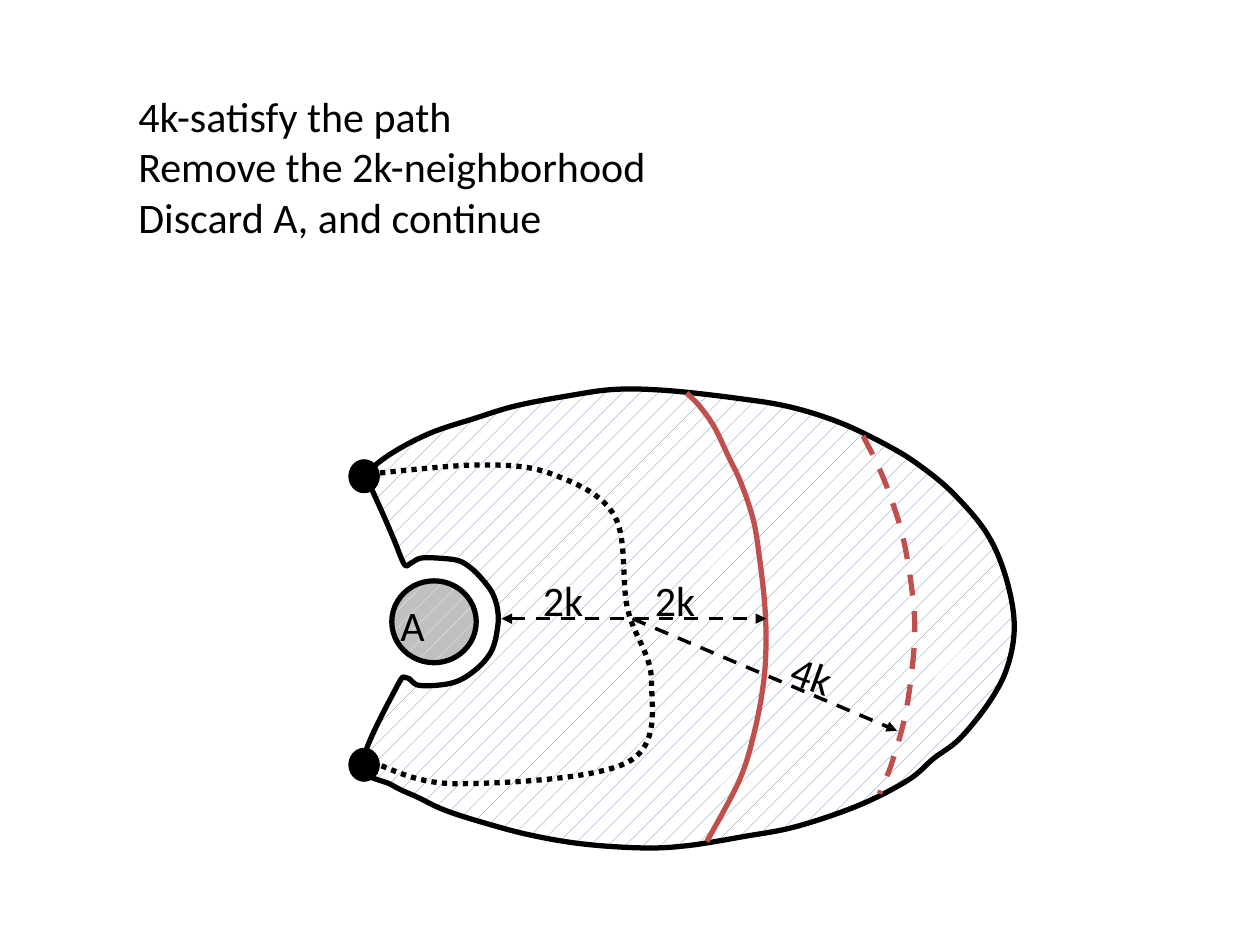
from lxml import etree
from pptx import Presentation
from pptx.dml.color import RGBColor
from pptx.enum.dml import MSO_LINE, MSO_PATTERN
from pptx.enum.shapes import MSO_CONNECTOR, MSO_SHAPE
from pptx.enum.text import MSO_AUTO_SIZE
from pptx.oxml.ns import qn
from pptx.util import Pt

PX = 9144  # 100 px to the inch
BLACK = RGBColor(0x00, 0x00, 0x00)
WHITE = RGBColor(0xFF, 0xFF, 0xFF)
BLUE = RGBColor(0x4F, 0x81, 0xBD)
RED = RGBColor(0xC0, 0x50, 0x4D)
GREY = RGBColor(0xC0, 0xC0, 0xC0)
DASH = MSO_LINE.DASH
DOT = MSO_LINE.ROUND_DOT
PATTERN = MSO_PATTERN.PERCENT_5
OVAL = MSO_SHAPE.OVAL
STRAIGHT = MSO_CONNECTOR.STRAIGHT
GROW = MSO_AUTO_SIZE.SHAPE_TO_FIT_TEXT

prs = Presentation()
prs.slide_width, prs.slide_height = 1000 * PX, 750 * PX
shapes = prs.slides.add_slide(prs.slide_layouts[6]).shapes


def add_text(text, left, top, width=73, height=46, size=24, color=BLACK, rotation=0):
    box = shapes.add_textbox(left * PX, top * PX, width * PX, height * PX)
    box.rotation = rotation
    frame = box.text_frame
    frame.word_wrap = True
    frame.auto_size = GROW
    frame.text = text
    for paragraph in frame.paragraphs:
        paragraph.font.name = "Calibri"
        paragraph.font.size = Pt(size)
        paragraph.font.color.rgb = color


def add_curve(points, color, dash=None, closed=False):
    """Draw a smooth (Catmull-Rom) curve through the points, given in px."""
    knots = points + points[:1] if closed else points
    emu = [(x * PX, y * PX) for x, y in knots]
    builder = shapes.build_freeform(*emu[0], scale=1.0)
    builder.add_line_segments(emu[1:], close=closed)
    curve = builder.convert_to_shape()
    curve.shadow.inherit = False
    curve.fill.background()
    curve.line.color.rgb = color
    curve.line.width = Pt(3)
    if dash:
        curve.line.dash_style = dash

    local = [(x - curve.left, y - curve.top) for x, y in emu]
    before = local[-2] if closed else local[0]
    after = local[1] if closed else local[-1]
    padded = [before] + local + [after]
    segments = list(curve._element.iter(qn("a:lnTo")))
    for segment, p0, p1, p2, p3 in zip(segments, padded, padded[1:], padded[2:], padded[3:]):
        leave = [b + (c - a) / 6 for a, b, c in zip(p0, p1, p2)]
        arrive = [b - (c - a) / 6 for a, b, c in zip(p1, p2, p3)]
        bezier = etree.Element(qn("a:cubicBezTo"))
        for x, y in (leave, arrive, p2):
            etree.SubElement(bezier, qn("a:pt"), x=str(round(x)), y=str(round(y)))
        segment.getparent().replace(segment, bezier)
    return curve


add_text("4k-satisfy the path\nRemove the 2k-neighborhood\nDiscard A, and continue",
         100, 67, width=883, height=170)

# Region with the neighborhood of A cut out
region = add_curve([
    (288, 606), (315, 545), (323, 538), (333, 544), (359, 542), (377, 532), (390, 517),
    (395, 498), (395, 484), (391, 471), (383, 460), (374, 451), (364, 445), (348, 443),
    (334, 443), (326, 447), (321, 448), (313, 429), (304, 408), (293, 384), (289, 378),
    (309, 361), (341, 344), (377, 332), (410, 322), (452, 314), (489, 309), (530, 310),
    (584, 316), (627, 323), (668, 336), (707, 355), (732, 371), (757, 392), (783, 423),
    (798, 457), (805, 495), (800, 528), (786, 556), (762, 586), (741, 602), (721, 619),
    (682, 639), (632, 656), (590, 664), (547, 671), (512, 673), (464, 670), (422, 663),
    (384, 653), (353, 643), (332, 633), (311, 623),
], BLACK, closed=True)
region.fill.patterned()
region.fill.pattern = PATTERN
region.fill.fore_color.rgb = BLUE
region.fill.back_color.rgb = WHITE

# Path endpoints
for endpoint_top in (365, 594):
    endpoint = shapes.add_shape(OVAL, 277 * PX, endpoint_top * PX, 24 * PX, 26 * PX)
    endpoint.shadow.inherit = False
    endpoint.fill.solid()
    endpoint.fill.fore_color.rgb = BLACK
    endpoint.line.color.rgb = BLACK
    endpoint.line.width = Pt(0.75)

# The path, then the borders at distance 2k and 4k
add_curve([(285, 377), (382, 369), (440, 377), (488, 410), (498, 483), (517, 540),
           (498, 605), (362, 622), (295, 605)], BLACK, DOT)
add_curve([(545, 312), (555, 322), (567, 339), (578, 362), (588, 383), (598, 413),
           (603, 444), (607, 480), (608, 511), (606, 542), (599, 580), (587, 619),
           (561, 668)], RED)
add_curve([(685, 346), (697, 370), (707, 395), (717, 428), (724, 470), (726, 502),
           (723, 539), (717, 574), (707, 608), (698, 630)], RED, DASH)

set_a = shapes.add_shape(OVAL, 311 * PX, 461 * PX, 67 * PX, 65 * PX)
set_a.shadow.inherit = False
set_a.fill.patterned()
set_a.fill.pattern = PATTERN
set_a.fill.fore_color.rgb = WHITE
set_a.fill.back_color.rgb = GREY
set_a.line.color.rgb = BLACK
set_a.line.width = Pt(3)

# Distance arrows
for x1, y1, x2, y2, ends in (
    (398, 491, 608, 491, ("a:headEnd", "a:tailEnd")),
    (502, 491, 712, 580, ("a:tailEnd",)),
):
    distance = shapes.add_connector(STRAIGHT, x1 * PX, y1 * PX, x2 * PX, y2 * PX)
    distance.line.color.rgb = BLACK
    distance.line.width = Pt(2)
    distance.line.dash_style = DASH
    properties = distance._element.spPr
    for end in ends:
        etree.SubElement(properties.find(qn("a:ln")), qn(end), type="triangle")
    etree.SubElement(properties, qn("a:effectLst"))

add_text("2k", 510, 451)
add_text("2k", 421, 451)
add_text("4k", 619, 514, rotation=20)
add_text("A", 308, 471)

prs.save("out.pptx")
